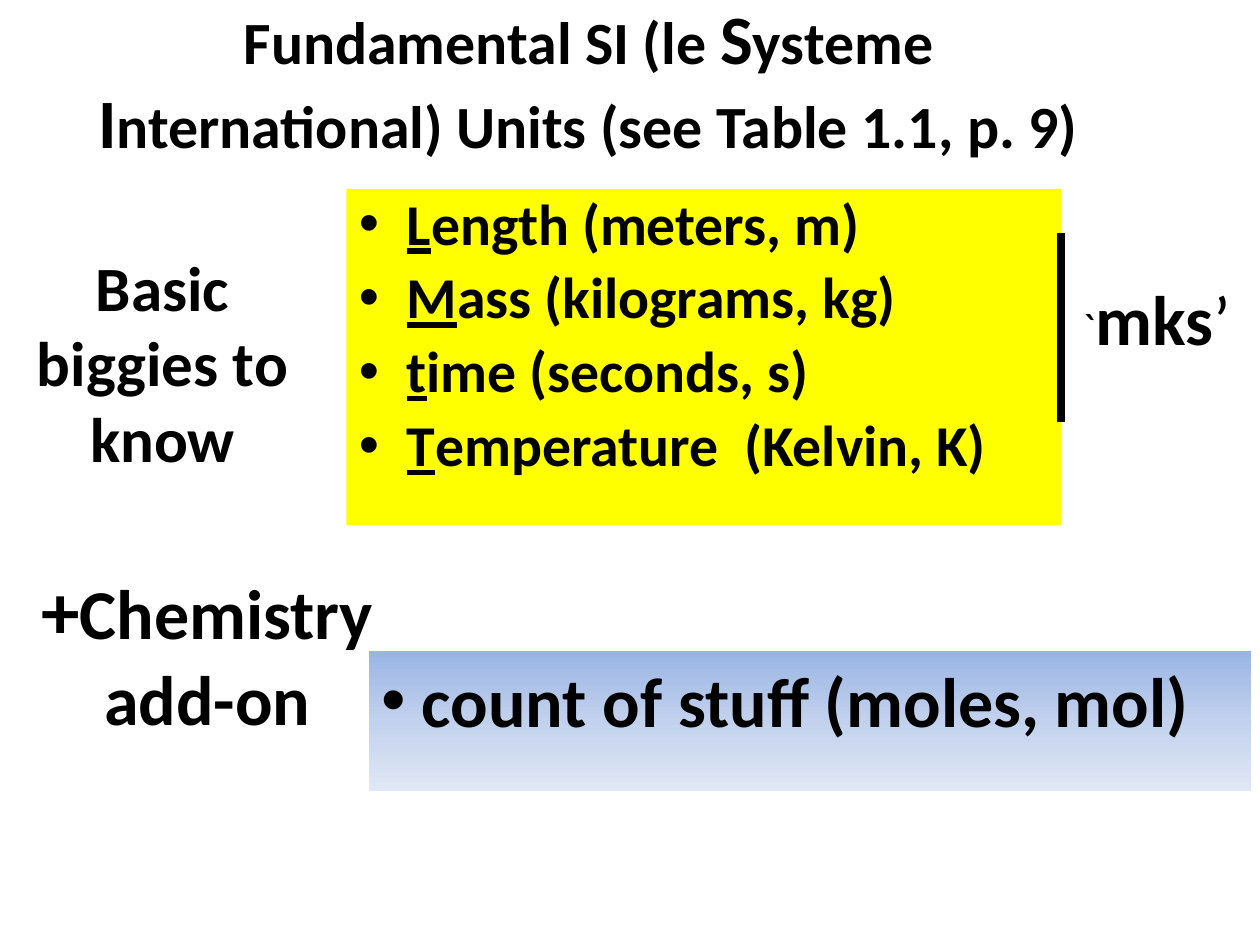
from copy import deepcopy

from lxml.etree import SubElement
from pptx import Presentation
from pptx.dml.color import RGBColor
from pptx.enum.shapes import MSO_CONNECTOR as Connector, MSO_SHAPE as Shape
from pptx.enum.text import MSO_ANCHOR as Anchor, MSO_AUTO_SIZE as AutoSize, PP_ALIGN as Align
from pptx.oxml.ns import qn
from pptx.util import Inches, Pt

WIDTH, HEIGHT = Inches(10), Inches(7.5)
COLORS = {
    "ink": "000000",
    "units": "FFFF00",
    "sky": "9AB5E4",
    "haze": "C2D1ED",
    "mist": "E1E8F5",
}
UNITS = [
    ("L", "ength (meters, m)"),
    ("M", "ass (kilograms, kg)"),
    ("t", "ime (seconds, s)"),
    ("T", "emperature  (Kelvin, K)"),
]


def color(name):
    """Return a palette colour."""
    return RGBColor.from_string(COLORS[name])


def area(left, top, width, height):
    """Turn shares of the slide's size into lengths."""
    return (round(left * WIDTH), round(top * HEIGHT),
            round(width * WIDTH), round(height * HEIGHT))


def add_bullet(paragraph, indent):
    """Give a paragraph a round bullet with a hanging indent."""
    properties = paragraph._p.get_or_add_pPr()
    properties.set("marL", str(Inches(indent)))
    properties.set("indent", str(-Inches(indent)))
    SubElement(properties, qn("a:buFont")).set("typeface", "Arial")
    SubElement(properties, qn("a:buChar")).set("char", "•")


def write(holder, paragraphs, align=Align.CENTER, anchor=Anchor.TOP,
          line=1.0, before=0, indent=None):
    """Fill a holder with paragraphs of (text, size, bold, underline) runs."""
    frame = holder.text_frame
    frame.word_wrap = True
    frame.auto_size = AutoSize.NONE
    frame.vertical_anchor = anchor
    for number, runs in enumerate(paragraphs):
        paragraph = frame.add_paragraph() if number else frame.paragraphs[0]
        paragraph.alignment = align
        paragraph.line_spacing = line
        paragraph.space_before = Pt(before)
        if indent is not None:
            add_bullet(paragraph, indent)
        for text, size, bold, underline in runs:
            run = paragraph.add_run()
            run.text = text
            font = run.font
            font.name, font.size = "Calibri", Pt(size)
            font.bold, font.underline = bold, underline
            font.color.rgb = color("ink")


def add_panel(slide, place):
    """Add a plain rectangle without outline or shadow."""
    panel = slide.shapes.add_shape(Shape.RECTANGLE, *area(*place))
    panel.shadow.inherit = False
    panel.line.fill.background()
    return panel


def add_label(slide, place, runs):
    """Add a centred one-paragraph label."""
    write(slide.shapes.add_textbox(*area(*place)), [runs])


def fade(panel, names):
    """Fill a panel with evenly spaced colours from top to bottom."""
    panel.fill.gradient()
    panel.fill.gradient_angle = 270
    stops = panel.fill._fill._gradFill.find(qn("a:gsLst"))
    while len(stops) < len(names):
        stops.append(deepcopy(stops[0]))
    for number, (stop, name) in enumerate(zip(panel.fill.gradient_stops, names)):
        stop.position = number / (len(names) - 1)
        stop.color.rgb = color(name)


def add_rule(slide, left, top, height):
    """Add a thick vertical line."""
    x, y, _, length = area(left, top, 0, height)
    rule = slide.shapes.add_connector(Connector.STRAIGHT, x, y, x, y + length)
    rule.line.color.rgb = color("ink")
    rule.line.width = Pt(4.5)
    SubElement(rule._element.spPr, qn("a:effectLst"))


def add_title(slide):
    """Place and write the title."""
    title = slide.shapes.title
    title.left, title.top, title.width, title.height = area(0.042, 0, 0.85, 1 / 6)
    write(title, [[
        ("Fundamental SI (le ", 34.2, True, False),
        ("S", 39.6, True, False),
        ("ysteme ", 34.2, True, False),
        ("I", 39.6, True, False),
        ("nternational) Units (see Table 1.1, p. 9)", 34.2, True, False),
    ]], anchor=Anchor.MIDDLE)


def main():
    """Build the slide on SI units."""
    deck = Presentation()
    deck.slide_width, deck.slide_height = WIDTH, HEIGHT
    slide = deck.slides.add_slide(deck.slide_layouts[5])
    add_title(slide)

    units = add_panel(slide, (0.275, 0.2, 0.567, 0.356))
    units.fill.solid()
    units.fill.fore_color.rgb = color("units")
    write(units, [[(initial, 33, True, True), (rest, 33, True, False)]
                  for initial, rest in UNITS],
          align=Align.LEFT, line=0.9, before=6.6, indent=0.38)

    add_label(slide, (0, 0.256, 0.258, 0.256),
              [("Basic biggies to know", 36, True, False)])

    moles = add_panel(slide, (0.293, 0.689, 0.7, 0.148))
    fade(moles, ["sky", "haze", "mist"])
    write(moles, [[(" ", 40, False, False),
                   ("count of stuff (moles, mol)", 40, True, False)]],
          align=Align.LEFT, indent=0)

    add_rule(slide, 0.842, 0.247, 0.2)
    add_label(slide, (0.842, 0.285, 0.152, 0.103),
              [("`", 26, False, False), ("mks", 40, True, False),
               ("’", 40, False, False)])
    add_label(slide, (0.004, 0.589, 0.321, 0.201),
              [("+", 44, True, False), ("Chemistry add-on", 40, True, False)])
    deck.save("out.pptx")


if __name__ == "__main__":
    main()
